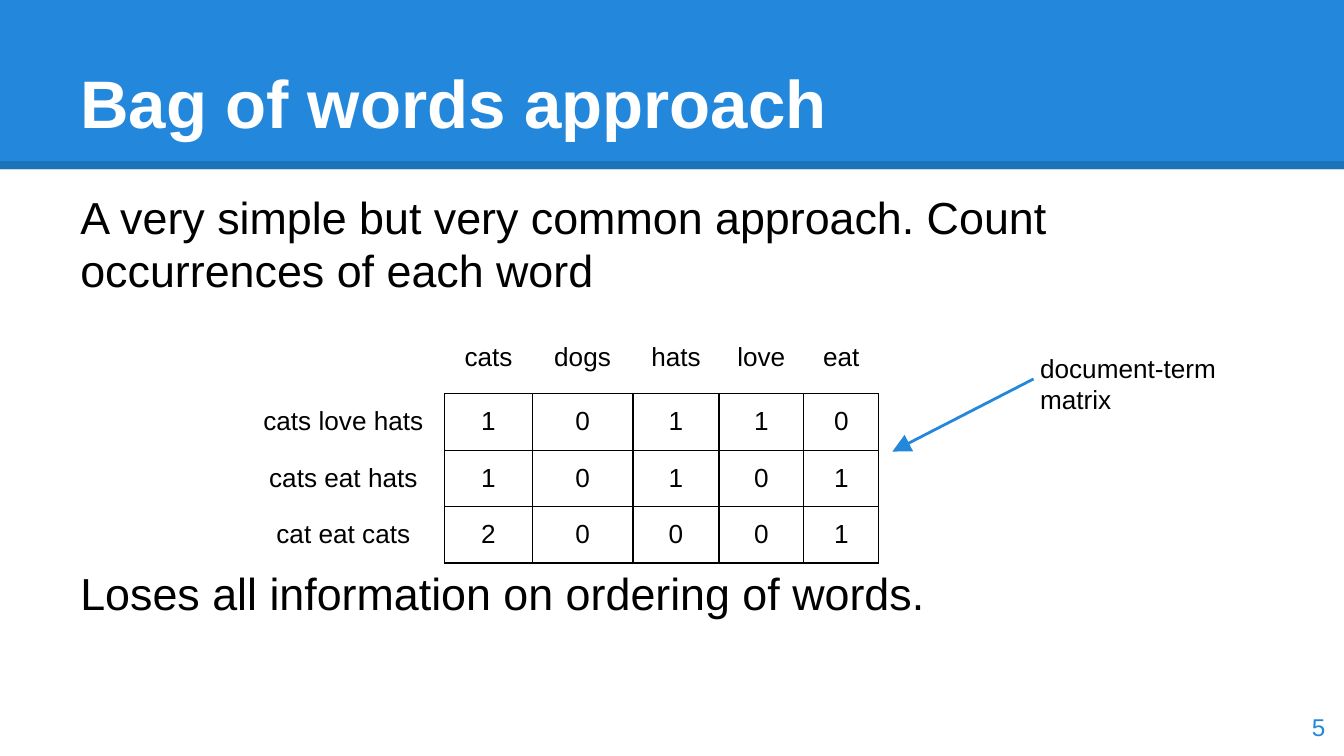
from lxml import etree
from pptx import Presentation
from pptx import util as u
from pptx.dml import color
from pptx.enum import shapes, text
from pptx.oxml import ns

COLORS = {"blue": "2388DB", "black": "000000", "white": "FFFFFF"}
WORDS = ["cats", "dogs", "hats", "love", "eat"]
COUNTS = {
    "cats love hats": [1, 0, 1, 1, 0],
    "cats eat hats": [1, 0, 1, 0, 1],
    "cat eat cats": [2, 0, 0, 0, 1],
}
COLUMN_WIDTHS = [1.51, 0.65, 0.75, 0.64, 0.63, 0.56]
HEADER_HEIGHT, ROW_HEIGHT = 0.48, 0.42


def rgb(name):
    """Return the named colour."""
    return color.RGBColor.from_string(COLORS[name])


def add_child(parent, tag, **attributes):
    """Append a drawing element to its parent."""
    return etree.SubElement(parent, ns.qn(tag), attributes)


def style(paragraph, size, hue="black", bold=False):
    """Set the font of a paragraph."""
    font = paragraph.font
    font.name, font.size, font.bold = "Arial", u.Pt(size), bold
    font.color.rgb = rgb(hue)


def set_margins(holder, bottom=0.1):
    """Set the insets of a text frame or a cell."""
    holder.margin_left = holder.margin_right = u.Inches(0.1)
    holder.margin_top, holder.margin_bottom = u.Inches(0.1), u.Inches(bottom)


def add_text(slide, box, lines, size, hue="black", bold=False,
             anchor=text.MSO_ANCHOR.TOP, align=text.PP_ALIGN.LEFT):
    """Place paragraphs in a wrapped box and return them."""
    frame = slide.shapes.add_textbox(*map(u.Inches, box)).text_frame
    frame.word_wrap, frame.vertical_anchor = True, anchor
    set_margins(frame)
    frame.text = "\n".join(lines)
    for paragraph in frame.paragraphs:
        paragraph.alignment = align
        style(paragraph, size, hue, bold)
    return frame.paragraphs


def add_line(slide, start, end, hue, width):
    """Draw a straight line without shadow and return its line element."""
    line = slide.shapes.add_connector(
        shapes.MSO_CONNECTOR.STRAIGHT, *map(u.Inches, (*start, *end)))
    line.line.color.rgb, line.line.width = rgb(hue), u.Pt(width)
    properties = line.line._get_or_add_ln()
    add_child(properties.getparent(), "a:effectLst")
    return properties


def add_header(slide, left, top, width, height):
    """Draw the title band with its darker lower edge."""
    band = slide.shapes.add_shape(
        shapes.MSO_SHAPE.RECTANGLE, *map(u.Inches, (left, top, width, height)))
    band.shadow.inherit = False
    band.fill.solid()
    band.fill.fore_color.rgb = rgb("blue")
    band.line.fill.background()
    edge_y = top + height - 0.03
    edge = add_line(slide, (left, edge_y), (left + width, edge_y), "black", 4.5)
    add_child(edge.find(".//" + ns.qn("a:srgbClr")), "a:alpha", val="15000")
    add_text(slide, (left + 0.5, top + 0.22, width - 1, 0.94),
             ["Bag of words approach"], 36, "white", True, text.MSO_ANCHOR.BOTTOM)


def add_body(slide, left, top, width, height):
    """Place the statements above and below the matrix."""
    statements = add_text(slide, (left, top, width, height), [
        "A very simple but very common approach. Count occurrences of each word",
        "Loses all information on ordering of words."], 24)
    statements[1].space_before = u.Pt(144)


def set_borders(cell, sides):
    """Draw the given sides of a cell and clear the others."""
    properties = cell._tc.get_or_add_tcPr()
    for side in "LRTB":
        border = add_child(properties, f"a:ln{side}", w=str(u.Pt(0.75)))
        if side in sides:
            fill = add_child(border, "a:solidFill")
            add_child(fill, "a:srgbClr", val=COLORS["black"])
        else:
            add_child(border, "a:noFill")


def add_matrix(slide, left, top):
    """Build the table of word counts for each document."""
    rows = [["", *WORDS], *([name, *counts] for name, counts in COUNTS.items())]
    heights = [HEADER_HEIGHT] + [ROW_HEIGHT] * len(COUNTS)
    box = (left, top, sum(COLUMN_WIDTHS), sum(heights))
    matrix = slide.shapes.add_table(
        len(rows), len(COLUMN_WIDTHS), *map(u.Inches, box)).table
    matrix.first_row = matrix.horz_banding = False
    for column, width in zip(matrix.columns, COLUMN_WIDTHS):
        column.width = u.Inches(width)
    for r, (values, height) in enumerate(zip(rows, heights)):
        matrix.rows[r].height = u.Inches(height)
        for c, value in enumerate(values):
            cell = matrix.cell(r, c)
            set_margins(cell, bottom=0.08)
            cell.text = str(value)
            label = cell.text_frame.paragraphs[0]
            label.alignment = text.PP_ALIGN.CENTER
            style(label, 14)
            if r and c:
                sides = "LRTB"
            else:
                sides = "B" if c else "R" if r else ""
            set_borders(cell, sides)
            cell.fill.background()


def add_callout(slide, left, top):
    """Label the matrix and point an arrow at it."""
    arrow = add_line(slide, (left + 0.05, top + 0.3), (left - 1, top + 0.84),
                     "blue", 1.5)
    add_child(arrow, "a:tailEnd", type="triangle", w="lg", len="lg")
    add_text(slide, (left, top, 1.76, 0.39), ["document-term", "matrix"], 14)


def add_page_number(slide, left, top, width, height):
    """Place the page number in the lower right corner."""
    add_text(slide, (left, top, width, height), ["5"], 13, "blue",
             anchor=text.MSO_ANCHOR.MIDDLE, align=text.PP_ALIGN.RIGHT)


def main():
    """Build and save the slide."""
    deck = Presentation()
    deck.slide_width = u.Inches(10)
    deck.slide_height = deck.slide_width * 9 // 16
    slide = deck.slides.add_slide(deck.slide_layouts[6])
    add_header(slide, 0, 0, 10, 1.26)
    add_body(slide, 0.5, 1.31, 9, 4.07)
    add_page_number(slide, 9.36, 5.19, 0.6, 0.43)
    add_matrix(slide, 1.8, 2.45)
    add_callout(slide, 7.64, 2.52)
    deck.save("out.pptx")


if __name__ == "__main__":
    main()
